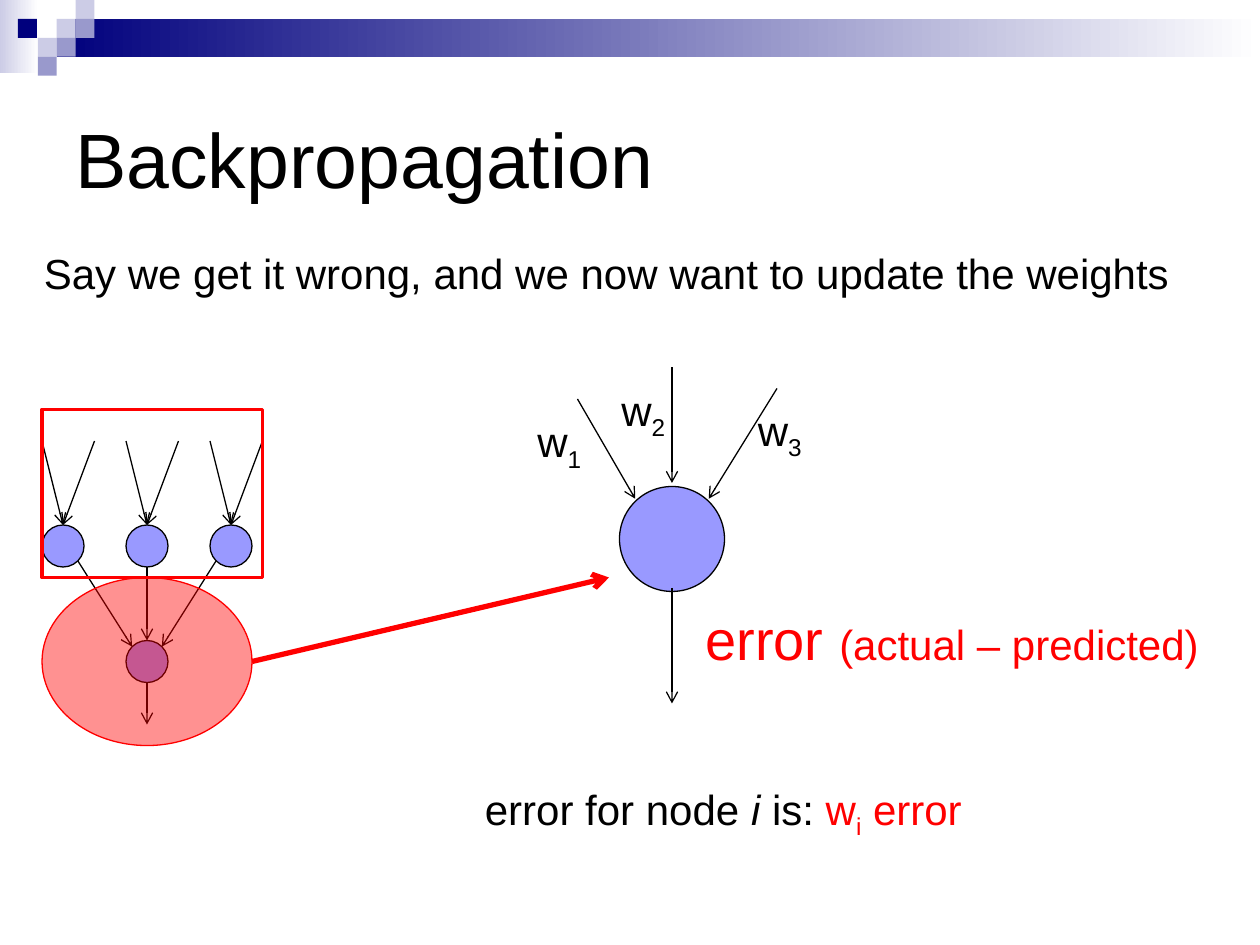
from dataclasses import dataclass
from lxml.etree import SubElement
from pptx import Presentation
from pptx.dml.color import RGBColor as Rgb
from pptx.enum.shapes import MSO_CONNECTOR as Conn, MSO_SHAPE as Kind
from pptx.enum.text import MSO_ANCHOR as Anchor
from pptx.oxml.ns import qn
from pptx.util import Pt


@dataclass(frozen=True)
class Theme:
    font: str = "Arial"
    ink: str = "000000"
    red: str = "FF0000"
    node: str = "9999FF"
    navy: str = "00007D"
    mid: str = "9999CC"
    pale: str = "CCCCE6"
    white: str = "FFFFFF"
    title: int = 44
    large: int = 32
    body: int = 24
    thin: float = 0.75
    frame: float = 2.25
    thick: float = 3


class Board:
    def __init__(self, slide, theme):
        self.slide, self.theme = slide, theme

    def shape(self, kind, x, y, w, h, fill=None, line=None, width=None, alpha=None):
        item = self.slide.shapes.add_shape(kind, Pt(x), Pt(y), Pt(w), Pt(h))
        item.shadow.inherit = False
        if isinstance(fill, tuple):
            item.fill.gradient()
            item.fill.gradient_angle = 0
            for stop, tone in zip(item.fill.gradient_stops, fill):
                stop.color.rgb = Rgb.from_string(tone)
        elif fill:
            item.fill.solid()
            item.fill.fore_color.rgb = Rgb.from_string(fill)
            if alpha:
                tone = item.fill._xPr.find(qn("a:solidFill"))[0]
                SubElement(tone, qn("a:alpha"), val=str(alpha * 1000))
        else:
            item.fill.background()
        if line:
            item.line.color.rgb = Rgb.from_string(line)
            item.line.width = Pt(width or self.theme.thin)
        else:
            item.line.fill.background()
        return item

    def node(self, x, y, r):
        """Draw a network node centred on x, y."""
        self.shape(Kind.OVAL, x - r, y - r, 2 * r, 2 * r,
                   self.theme.node, self.theme.ink)

    def arrow(self, x1, y1, x2, y2, tone=None, width=None):
        item = self.slide.shapes.add_connector(
            Conn.STRAIGHT, Pt(x1), Pt(y1), Pt(x2), Pt(y2))
        item.line.color.rgb = Rgb.from_string(tone or self.theme.ink)
        item.line.width = Pt(width or self.theme.thin)
        SubElement(item.line._get_or_add_ln(), qn("a:tailEnd"), type="arrow")
        SubElement(item._element.spPr, qn("a:effectLst"))

    def text(self, x, y, w, h, *runs, anchor=Anchor.TOP):
        """Each run is a string and a dict of format values."""
        frame = self.slide.shapes.add_textbox(Pt(x), Pt(y), Pt(w), Pt(h)).text_frame
        frame.word_wrap = True
        frame.vertical_anchor = anchor
        for words, style in runs:
            look = {"name": self.theme.font, "size": self.theme.body,
                    "tone": self.theme.ink, **style}
            look["size"] = Pt(look["size"])
            tone, base = look.pop("tone"), look.pop("base", None)
            run = frame.paragraphs[0].add_run()
            run.text = words
            for key, value in look.items():
                setattr(run.font, key, value)
            run.font.color.rgb = Rgb.from_string(tone)
            if base:
                run._r.get_or_add_rPr().set("baseline", str(base * 1000))


def main():
    deck = Presentation()
    deck.slide_width, deck.slide_height = Pt(720), Pt(540)
    theme = Theme()
    board = Board(deck.slides.add_slide(deck.slide_layouts[6]), theme)
    red, sub = {"tone": theme.red}, {"base": -25}

    # Header band and its squares
    unit = 10.8
    board.shape(Kind.RECTANGLE, 0, 0, 22, 42, (theme.pale, theme.white))
    board.shape(Kind.RECTANGLE, 3 * unit, unit, 720 - 3 * unit, 2 * unit,
                (theme.navy, theme.white))
    for col, row, tone in (
            (3, 1, theme.pale), (4, 0, theme.pale), (4, 1, theme.mid),
            (2, 2, theme.pale), (0.95, 1, theme.navy), (3, 2, theme.mid),
            (2, 3, theme.mid)):
        board.shape(Kind.RECTANGLE, col * unit, row * unit, unit, unit, tone)

    # Title
    board.text(36, 36, 648, 108, ("Backpropagation", {"size": theme.title}),
               anchor=Anchor.MIDDLE)

    # Small network: three hidden nodes above one output node
    r, mid, top, low = 12, 84, 312, 378
    hidden = [mid + step * 48 for step in (-1, 0, 1)]
    for x in hidden:
        board.node(x, top, r)
    board.node(mid, low, r)
    for side, x in zip((-1, 0, 1), hidden):
        drop = 0 if side == 0 else 3.5
        board.arrow(x - side * 8.5, top + r - drop,
                    mid + side * 8.5, low - r + drop)
    for x in hidden:
        for start in (x - 12, x + 18):
            board.arrow(start, 252, x, top - r)
    board.arrow(mid, low + r, mid, 414)

    # Hidden layer frame, message and output highlight
    board.shape(Kind.RECTANGLE, 24, 234, 126, 96, line=theme.red, width=theme.frame)
    board.text(18, 138, 720, 36,
               ("Say we get it wrong, and we now want to update the weights", {}))
    board.shape(Kind.OVAL, 24, 330, 120, 96, theme.red, theme.red, alpha=43)

    # Enlarged output node
    board.node(384, 308, 30)
    board.arrow(384, 336, 384, 402)
    board.arrow(144, 378, 348, 330, theme.red, theme.thick)
    board.text(396, 342, 324, 46, ("error ", {**red, "size": theme.large}),
               ("(actual – predicted)", red))

    # Weighted inputs
    for line in ((330, 228, 363, 285), (384, 210, 384, 276), (444, 222, 405, 285)):
        board.arrow(*line)
    for mark, x, y in (("1", 300, 234), ("2", 348, 216), ("3", 426, 227.5)):
        board.text(x, y, 48, 36, ("w", {}), (mark, sub))

    # Rule for the node error
    board.text(270, 444, 342, 36, ("error for node ", {}), ("i", {"italic": True}),
               (" is: ", {}), ("w", red), ("i", {**red, **sub}), (" error", red))

    deck.save("out.pptx")


if __name__ == "__main__":
    main()
